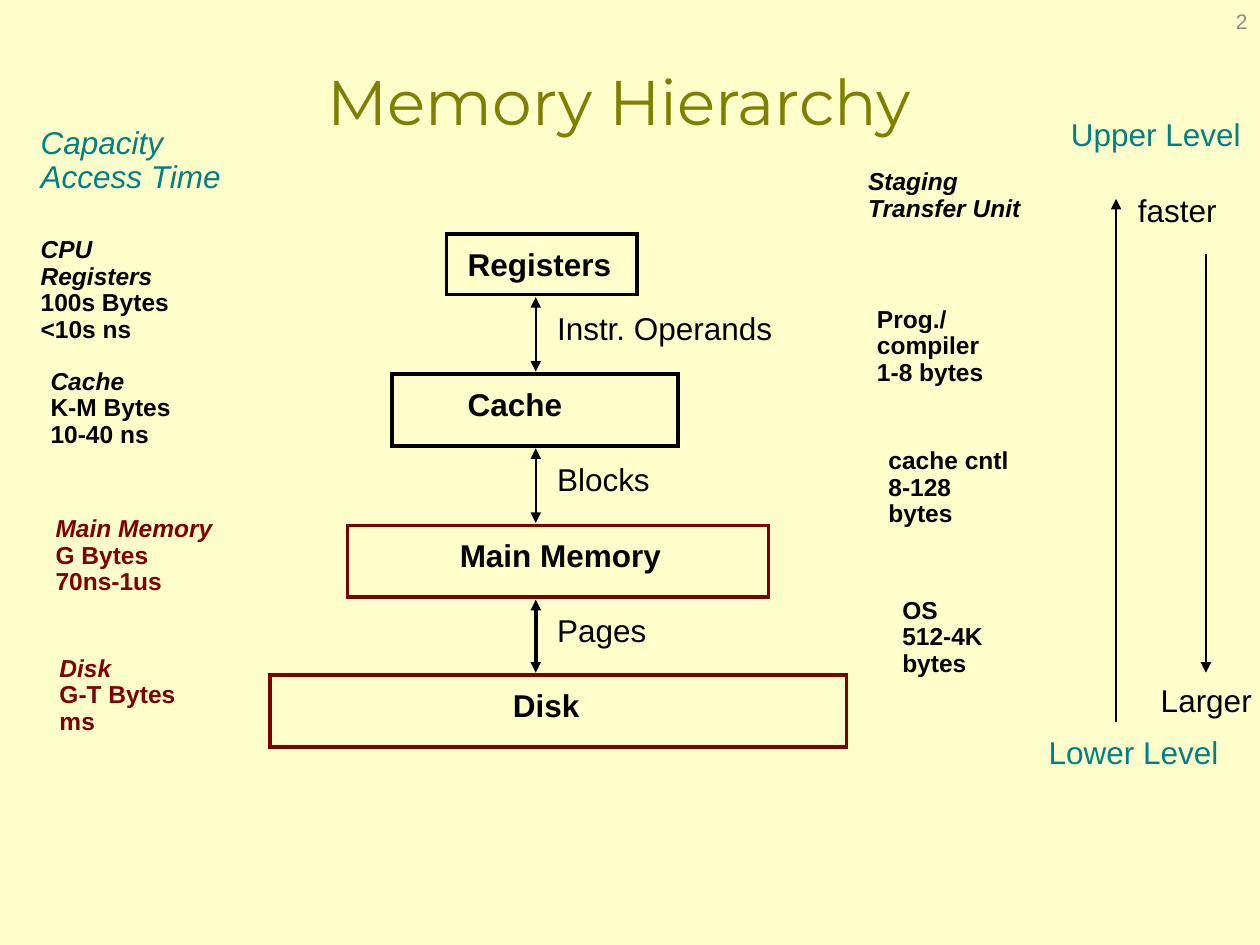
from pptx import Presentation
from pptx.dml.color import RGBColor
from pptx.enum.shapes import MSO_CONNECTOR, MSO_SHAPE
from pptx.enum.text import MSO_ANCHOR, PP_ALIGN
from pptx.oxml.ns import qn
from pptx.util import Cm, Pt
from lxml import etree

RECT, STRAIGHT = MSO_SHAPE.RECTANGLE, MSO_CONNECTOR.STRAIGHT
TOP, MIDDLE = MSO_ANCHOR.TOP, MSO_ANCHOR.MIDDLE
LEFT, CENTER, RIGHT = PP_ALIGN.LEFT, PP_ALIGN.CENTER, PP_ALIGN.RIGHT

COLORS = {"background": "FFFFCC", "black": "000000", "maroon": "800000",
          "teal": "008080", "olive": "808000", "gray": "8C8C8C"}

# Levels: name, box left, top, width, height, outline, name left, name width
LEVELS = [
    ("Registers", 9, 4.72, 3.84, 1.22, "black", 9.25, 3.25),
    ("Cache", 7.9, 7.54, 5.77, 1.45, "black", 9.25, 2.26),
    ("Main Memory", 7.01, 10.59, 8.48, 1.45, "maroon", 9.09, 4.8),
    ("Disk", 5.44, 13.61, 11.63, 1.45, "maroon", 10.16, 1.7),
]
# Transfers between neighbouring levels: label, label width, arrow weight
TRANSFERS = [("Instr. Operands", 4.72, 1), ("Blocks", 2.24, 1), ("Pages", 2.16, 2)]

# Notes: lines, left, top, width, height, color ("\v" breaks a line)
CAPACITIES = [
    (["CPU\vRegisters", "100s Bytes", "<10s ns"], 0.64, 4.72, 3.78, 1.75, "black"),
    (["Cache", "K-M Bytes", "10-40 ns"], 0.84, 7.37, 2.82, 1.78, "black"),
    (["Main Memory", "G Bytes", "70ns-1us"], 0.94, 10.34, 3.66, 1.78, "maroon"),
    (["Disk", "G-T Bytes", "ms"], 1.02, 13.16, 2.74, 1.78, "maroon"),
]
STAGING = [
    (["Prog./\vcompiler", "1-8 bytes"], 17.5, 6.12, 3.81, 1.22, "black"),
    (["cache cntl", "8-128\vbytes"], 17.73, 8.97, 3.05, 1.22, "black"),
    (["OS", "512-4K\vbytes"], 18.01, 11.99, 3.4, 1.22, "black"),
]
# Scale labels: text, left, top, width, color
SCALE_LABELS = [
    ("Upper Level", 21.41, 2.36, 3.78, "teal"),
    ("Lower Level", 20.96, 14.83, 3.78, "teal"),
    ("faster", 22.76, 3.89, 1.93, "black"),
    ("Larger", 23.22, 13.77, 2.18, "black"),
]
# Scale arrows: x, start y, end y
SCALE_ARROWS = [(22.5, 14.55, 4.01), (24.31, 5.13, 13.56)]

LABEL_HEIGHT, ARROW_X, ARROW_GAP = 0.79, 10.8, 0.05

prs = Presentation()
prs.slide_width, prs.slide_height = Cm(25.4), Cm(19.05)
slide = prs.slides.add_slide(prs.slide_layouts[6])


def rgb(name):
    return RGBColor.from_string(COLORS[name])


def add_text(lines, left, top, width, height, color="black", size=18, font="Arial",
             bold=False, italic_lines=0, spacing=0.85, align=LEFT, anchor=TOP,
             insets=(0.18, 0.07, 0)):
    frame = slide.shapes.add_textbox(Cm(left), Cm(top), Cm(width), Cm(height)).text_frame
    frame.word_wrap, frame.vertical_anchor = True, anchor
    frame.margin_left, frame.margin_right = Cm(insets[0]), Cm(insets[2])
    frame.margin_top = frame.margin_bottom = Cm(insets[1])
    for i, line in enumerate(lines):
        paragraph = frame.add_paragraph() if i else frame.paragraphs[0]
        paragraph.text = line
        paragraph.alignment, paragraph.line_spacing = align, spacing
        for run in paragraph.runs:
            run.font.name, run.font.size = font, Pt(size)
            run.font.bold, run.font.italic = bold, i < italic_lines
            run.font.color.rgb = rgb(color)


def add_arrow(x, start, end, weight=1, both=False):
    arrow = slide.shapes.add_connector(STRAIGHT, Cm(x), Cm(start), Cm(x), Cm(end))
    arrow.line.color.rgb, arrow.line.width = rgb("black"), Pt(weight)
    properties = arrow.line._get_or_add_ln()
    for tag in (["a:headEnd"] if both else []) + ["a:tailEnd"]:
        etree.SubElement(properties, qn(tag), type="triangle")
    etree.SubElement(arrow._element.spPr, qn("a:effectLst"))


# Background, title and page number
slide.background.fill.solid()
slide.background.fill.fore_color.rgb = rgb("background")
add_text(["Memory Hierarchy"], 1.47, 0.43, 22.02, 3.18, color="olive", size=36,
         font="Montserrat", spacing=1, align=CENTER, anchor=MIDDLE,
         insets=(0.25, 0.13, 0.25))
add_text(["2"], 19.48, -0.08, 5.92, 1.02, color="gray", size=12, spacing=1,
         align=RIGHT, anchor=MIDDLE, insets=(0.25, 0.13, 0.25))

# Column headings and notes
add_text(["Capacity", "Access Time"], 0.64, 2.49, 3.99, 1.52, color="teal",
         italic_lines=2, spacing=0.9)
add_text(["Staging", "Transfer Unit"], 17.32, 3.35, 4.42, 1.22, size=14,
         bold=True, italic_lines=2, spacing=0.9)
for notes, italic_lines in ((CAPACITIES, 1), (STAGING, 0)):
    for note in notes:
        add_text(*note, size=14, bold=True, italic_lines=italic_lines, spacing=0.9)

# Level boxes with square corners
for name, left, top, width, height, outline, name_left, name_width in LEVELS:
    box = slide.shapes.add_shape(RECT, Cm(left), Cm(top), Cm(width), Cm(height))
    box.shadow.inherit = False
    box.fill.background()
    box.line.color.rgb, box.line.width = rgb(outline), Pt(2)
    etree.SubElement(box.line._get_or_add_ln(), qn("a:miter"), lim="800000")
    add_text([name], name_left, top + 0.26, name_width, LABEL_HEIGHT, bold=True)

# Transfers between levels
for (label, width, weight), upper, lower in zip(TRANSFERS, LEVELS, LEVELS[1:]):
    bottom = upper[2] + upper[4]
    add_arrow(ARROW_X, bottom + ARROW_GAP, lower[2] - ARROW_GAP, weight, both=True)
    add_text([label], ARROW_X + 0.25, bottom + 0.33, width, LABEL_HEIGHT)

# Speed and size scale
for label, left, top, width, color in SCALE_LABELS:
    add_text([label], left, top, width, LABEL_HEIGHT, color=color)
for x, start, end in SCALE_ARROWS:
    add_arrow(x, start, end)

prs.save("out.pptx")
